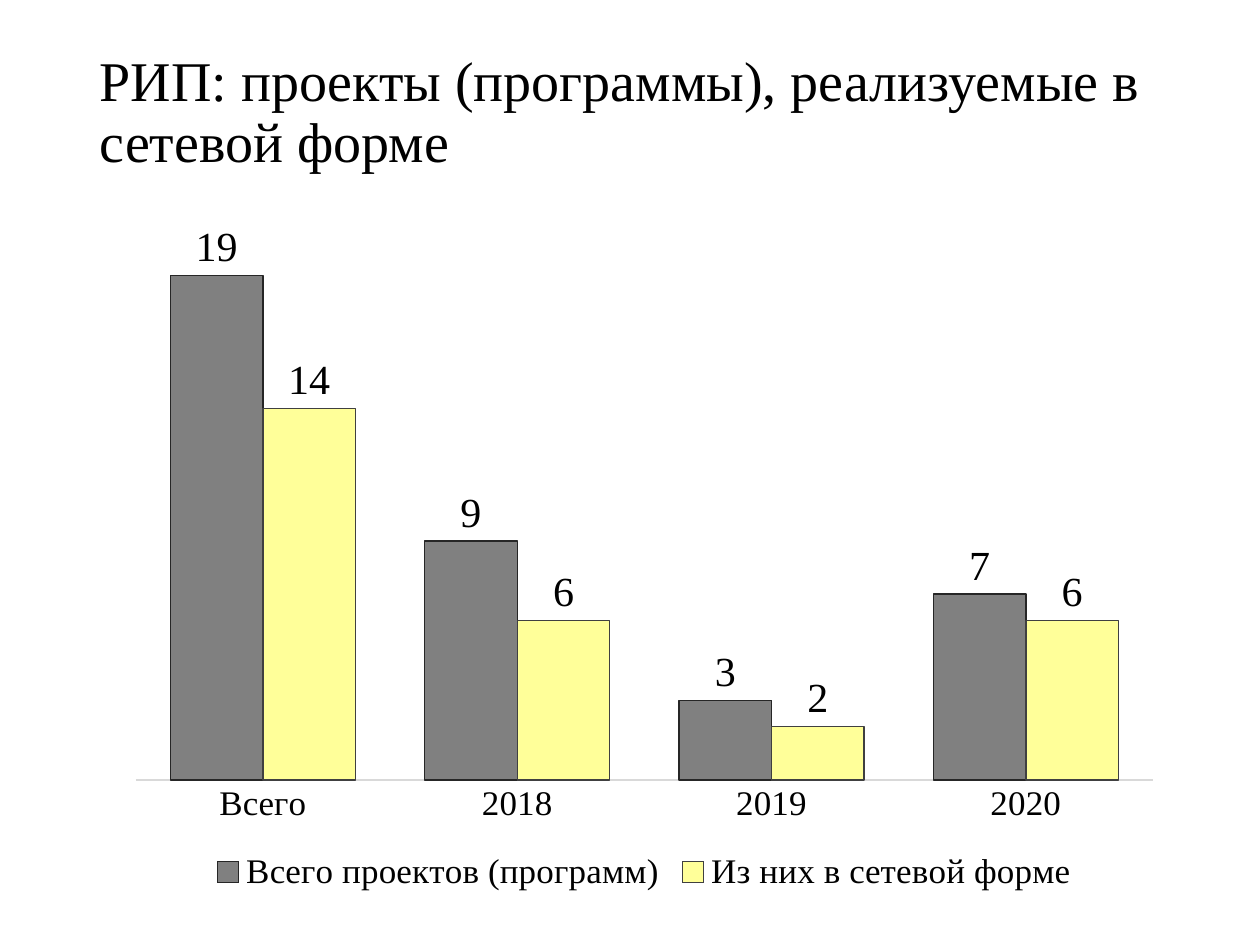
from pptx import Presentation
from pptx.chart.data import CategoryChartData
from pptx.dml.color import RGBColor
from pptx.enum.chart import XL_CHART_TYPE, XL_LABEL_POSITION, XL_LEGEND_POSITION, XL_TICK_MARK
from pptx.enum.text import MSO_ANCHOR, MSO_AUTO_SIZE, PP_ALIGN
from pptx.util import Inches, Pt

TITLE = "РИП: проекты (программы), реализуемые в сетевой форме"
CATEGORIES = ["Всего", "2018", "2019", "2020"]

BLACK = RGBColor(0x00, 0x00, 0x00)
AXIS_GRAY = RGBColor(0xD9, 0xD9, 0xD9)
# name, values, fill, outline
SERIES = [
    ("Всего проектов (программ)", (19, 9, 3, 7),
     RGBColor(0x80, 0x80, 0x80), RGBColor(0x26, 0x26, 0x26)),
    ("Из них в сетевой форме", (14, 6, 2, 6),
     RGBColor(0xFF, 0xFF, 0x99), RGBColor(0x40, 0x40, 0x40)),
]
FONT = "Times New Roman"
TITLE_BOX = [Inches(n) for n in (0.69, 0.18, 8.62, 1.45)]
CHART_BOX = [Inches(n) for n in (0.91, 1.78, 8.41, 5.35)]


def style_font(font, size):
    font.name = FONT
    font.size = Pt(size)
    font.bold = False
    font.color.rgb = BLACK


def style_line(line, color):
    line.color.rgb = color
    line.width = Pt(0.75)


def add_title(slide):
    title = slide.shapes.title
    title.left, title.top, title.width, title.height = TITLE_BOX
    frame = title.text_frame
    frame.text = TITLE
    frame.word_wrap = True
    frame.auto_size = MSO_AUTO_SIZE.NONE
    frame.vertical_anchor = MSO_ANCHOR.MIDDLE
    paragraph = frame.paragraphs[0]
    paragraph.alignment = PP_ALIGN.LEFT
    paragraph.line_spacing = 0.9
    style_font(paragraph.runs[0].font, 32)


def add_projects_chart(slide):
    data = CategoryChartData(number_format="General")
    data.categories = CATEGORIES
    for name, values, _, _ in SERIES:
        data.add_series(name, values)
    chart = slide.shapes.add_chart(
        XL_CHART_TYPE.COLUMN_CLUSTERED, *CHART_BOX, data).chart
    chart.has_title = False
    style_font(chart.font, 20)

    chart.has_legend = True
    chart.legend.position = XL_LEGEND_POSITION.BOTTOM
    chart.legend.include_in_layout = False
    style_font(chart.legend.font, 20)

    years = chart.category_axis
    years.major_tick_mark = years.minor_tick_mark = XL_TICK_MARK.NONE
    style_font(years.tick_labels.font, 20)
    style_line(years.format.line, AXIS_GRAY)

    counts = chart.value_axis
    counts.minimum_scale, counts.maximum_scale = 0, 20
    counts.has_major_gridlines = False
    counts.visible = False

    plot = chart.plots[0]
    plot.gap_width = 75
    plot.overlap = 0
    plot.vary_by_categories = False
    for series, (_, _, fill, outline) in zip(plot.series, SERIES):
        series.format.fill.solid()
        series.format.fill.fore_color.rgb = fill
        style_line(series.format.line, outline)
        labels = series.data_labels
        labels.show_value = True
        labels.position = XL_LABEL_POSITION.OUTSIDE_END
        style_font(labels.font, 24)


def main():
    deck = Presentation()
    deck.slide_width, deck.slide_height = Inches(10), Inches(7.5)
    slide = deck.slides.add_slide(deck.slide_layouts.get_by_name("Title Only"))
    add_title(slide)
    add_projects_chart(slide)
    deck.save("out.pptx")


if __name__ == "__main__":
    main()
